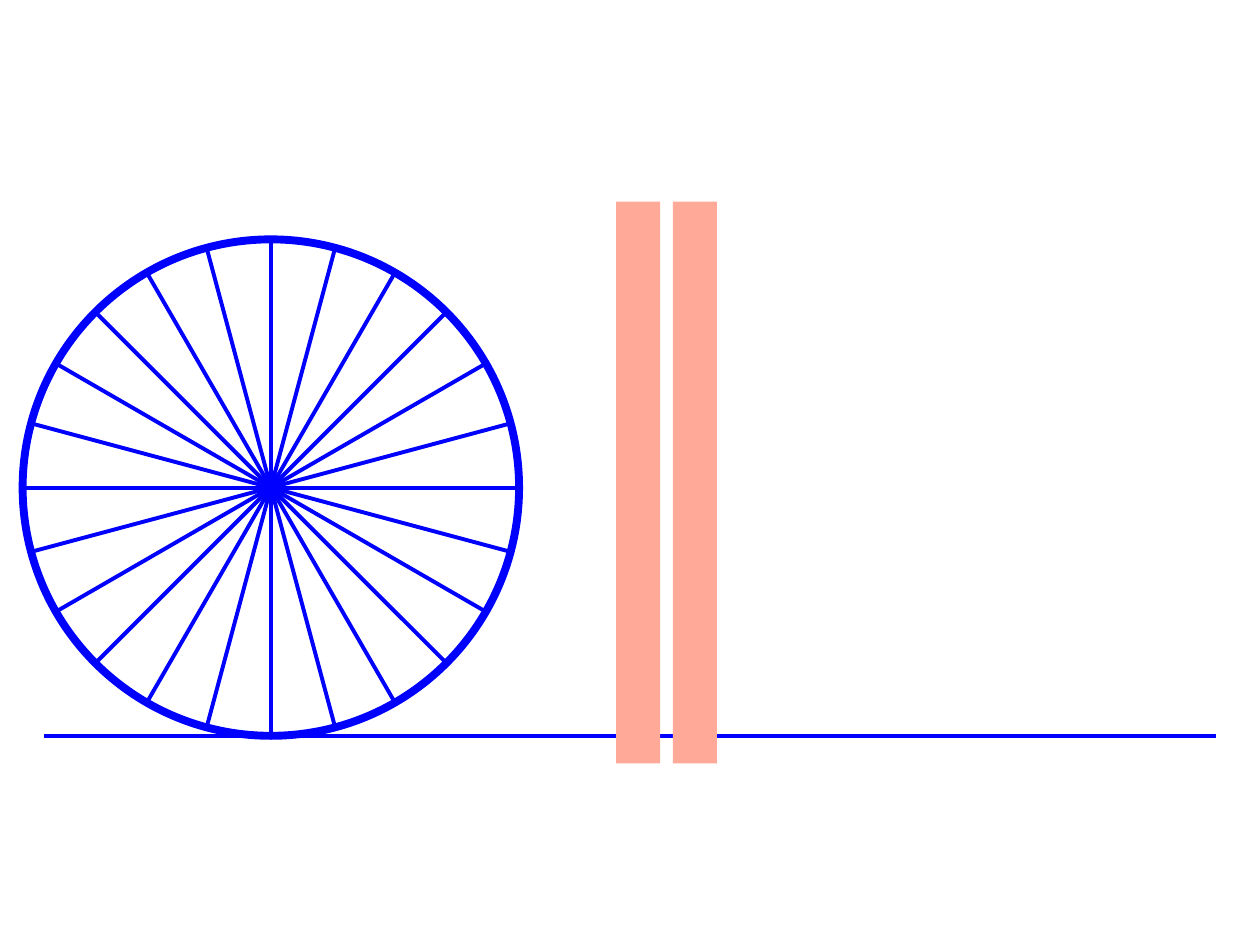
import math
from pptx import Presentation, util as u
from pptx.dml.color import RGBColor
from pptx.enum import shapes
from pptx.oxml.ns import qn
from lxml import etree

COLORS = {"wheel": "0000FF", "post": "FFA999"}
blue = RGBColor.from_string(COLORS["wheel"])
pink = RGBColor.from_string(COLORS["post"])

deck = Presentation()
deck.slide_width, deck.slide_height = u.Inches(10), u.Inches(7.5)
slide = deck.slides.add_slide(deck.slide_layouts[6])


def add_line(parent, x1, y1, x2, y2):
    line = parent.add_connector(shapes.MSO_CONNECTOR.STRAIGHT,
                                *map(u.Inches, (x1, y1, x2, y2)))
    line.line.color.rgb = blue
    line.line.width = u.Pt(2.25)
    etree.SubElement(line._element.spPr, qn("a:effectLst"))


# Wheel: rim and evenly turned spokes, in one group
mid_x, mid_y, radius = 2.15, 3.87, 1.97
spokes = 12
wheel = slide.shapes.add_group_shape().shapes
rim = wheel.add_shape(shapes.MSO_SHAPE.OVAL,
                      u.Inches(mid_x - radius), u.Inches(mid_y - radius),
                      u.Inches(2 * radius), u.Inches(2 * radius))
rim.shadow.inherit = False
rim.fill.background()
rim.line.color.rgb = blue
rim.line.width = u.Pt(4.5)
for turn in range(spokes):
    angle = math.pi * turn / spokes
    dx, dy = radius * math.cos(angle), radius * math.sin(angle)
    add_line(wheel, mid_x + dx, mid_y + dy, mid_x - dx, mid_y - dy)

# Ground under the wheel
ground = mid_y + radius
add_line(slide.shapes, 9.65, ground, 0.35, ground)

# Two posts in front of the ground
for left in (4.89, 5.34):
    post = slide.shapes.add_shape(shapes.MSO_SHAPE.RECTANGLE,
                                  u.Inches(left), u.Inches(1.6),
                                  u.Inches(0.35), u.Inches(4.46))
    post.shadow.inherit = False
    post.fill.solid()
    post.fill.fore_color.rgb = pink
    post.line.fill.background()

deck.save("out.pptx")
